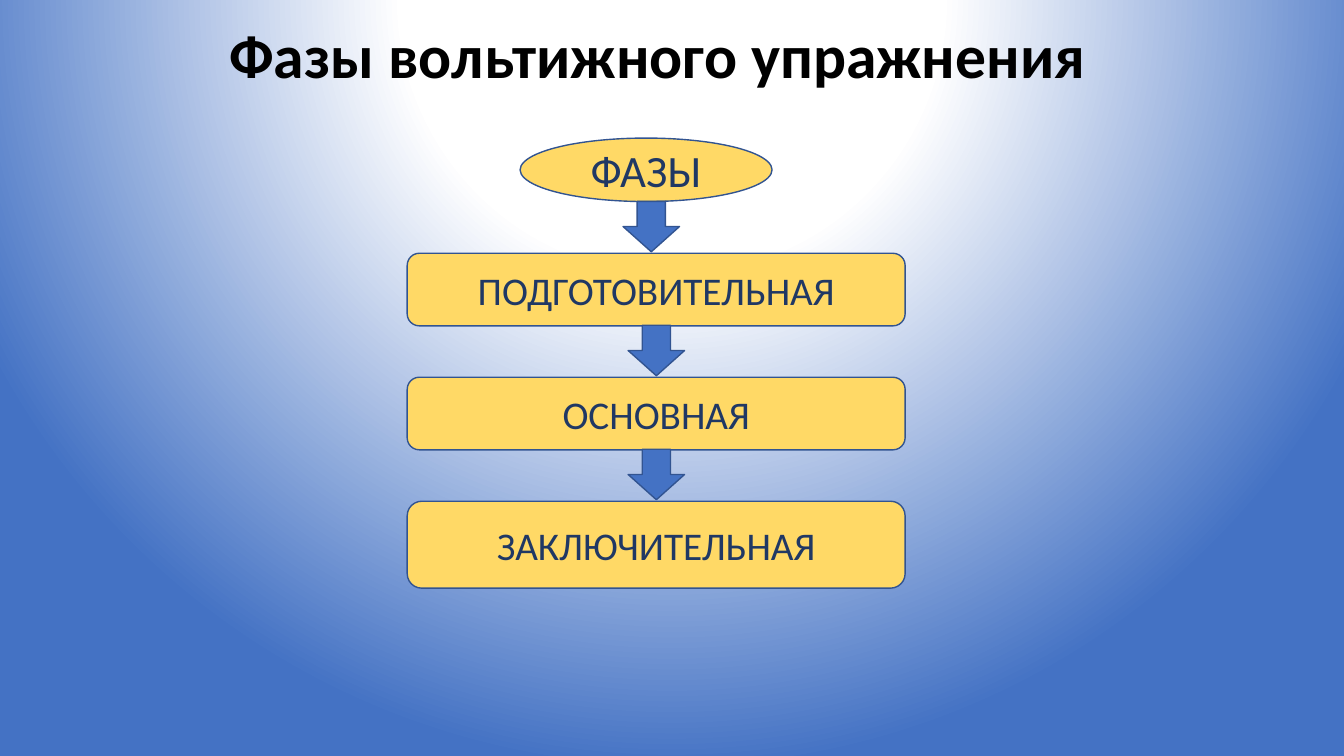
from dataclasses import dataclass

from pptx import Presentation
from pptx.dml.color import RGBColor
from pptx.enum.shapes import MSO_SHAPE
from pptx.enum.text import MSO_ANCHOR, MSO_AUTO_SIZE, PP_ALIGN
from pptx.oxml import parse_xml
from pptx.oxml.ns import nsdecls, qn
from pptx.util import Inches, Pt

ELLIPSE = MSO_SHAPE.OVAL
ROUNDED = MSO_SHAPE.ROUNDED_RECTANGLE
DOWN_ARROW = MSO_SHAPE.DOWN_ARROW
CENTER = PP_ALIGN.CENTER
MIDDLE = MSO_ANCHOR.MIDDLE
NO_AUTOFIT = MSO_AUTO_SIZE.NONE

SLIDE_WIDTH, SLIDE_HEIGHT = Inches(13.33), Inches(7.5)
TITLE_ONLY_LAYOUT = 5


@dataclass(frozen=True)
class Theme:
    font: str = "Calibri"
    title_color: str = "000000"
    text_color: str = "203864"
    box_fill: str = "FFD966"
    accent: str = "4472C4"
    outline: str = "325491"
    glow: str = "FFFFFF"
    title_size: int = 44
    head_size: int = 32
    phase_size: int = 28
    line_width: int = 1


THEME = Theme()

PHASES = [
    ("ПОДГОТОВИТЕЛЬНАЯ", 9.6, 46.36),
    ("ОСНОВНАЯ", 9.6, 46.74),
    ("ЗАКЛЮЧИТЕЛЬНАЯ", 11.5, 46.74),
]
PHASE_LEFT, PHASE_WIDTH = 30.3, 37.05
PHASE_TOP, PHASE_PITCH = 33.5, 16.4
ARROW_RISE, ARROW_WIDTH, ARROW_HEIGHT = 6.87, 4.2, 6.67


def share(left, top, width, height):
    return (
        int(SLIDE_WIDTH * left / 100),
        int(SLIDE_HEIGHT * top / 100),
        int(SLIDE_WIDTH * width / 100),
        int(SLIDE_HEIGHT * height / 100),
    )


def write(box, text, *, size, color, bold=False, spacing=1.0):
    frame = box.text_frame
    frame.word_wrap = True
    frame.auto_size = NO_AUTOFIT
    frame.vertical_anchor = MIDDLE
    para = frame.paragraphs[0]
    para.alignment = CENTER
    para.line_spacing = spacing
    span = para.add_run()
    span.text = text
    span.font.name = THEME.font
    span.font.size = Pt(size)
    span.font.bold = bold
    span.font.color.rgb = RGBColor.from_string(color)


def add_block(page, kind, area, fill):
    block = page.shapes.add_shape(kind, *share(*area))
    block.shadow.inherit = False
    block.fill.solid()
    block.fill.fore_color.rgb = RGBColor.from_string(fill)
    block.line.color.rgb = RGBColor.from_string(THEME.outline)
    block.line.width = Pt(THEME.line_width)
    return block


def paint_background(page):
    page.background.fill.gradient()
    gradient = page.element.find(".//" + qn("a:gradFill"))
    stops = "".join(
        f'<a:gs pos="{place * 1000}"><a:srgbClr val="{color}"/></a:gs>'
        for place, color in [(0, THEME.glow), (35, THEME.glow), (100, THEME.accent)]
    )
    radial = parse_xml(
        f'<a:gradFill {nsdecls("a")} rotWithShape="1"><a:gsLst>{stops}</a:gsLst>'
        '<a:path path="circle">'
        '<a:fillToRect l="50000" t="-80000" r="50000" b="180000"/>'
        "</a:path></a:gradFill>"
    )
    gradient.getparent().replace(gradient, radial)


def set_title(page, text):
    title = page.shapes.title
    title.left, title.top, title.width, title.height = share(12.83, 2, 74.34, 11.47)
    title.text_frame.margin_right = Inches(0.38)
    write(title, text, size=THEME.title_size, color=THEME.title_color,
          bold=True, spacing=0.9)


def add_phase(page, index, text, height, arrow_left):
    top = PHASE_TOP + index * PHASE_PITCH
    arrow_area = (arrow_left, top - ARROW_RISE, ARROW_WIDTH, ARROW_HEIGHT)
    add_block(page, DOWN_ARROW, arrow_area, THEME.accent)
    box = add_block(page, ROUNDED, (PHASE_LEFT, top, PHASE_WIDTH, height), THEME.box_fill)
    write(box, text, size=THEME.phase_size, color=THEME.text_color)


def main():
    deck = Presentation()
    deck.slide_width, deck.slide_height = SLIDE_WIDTH, SLIDE_HEIGHT
    page = deck.slides.add_slide(deck.slide_layouts[TITLE_ONLY_LAYOUT])
    paint_background(page)
    set_title(page, "Фазы вольтижного упражнения")
    head = add_block(page, ELLIPSE, (38.7, 18.27, 18.75, 8.4), THEME.box_fill)
    write(head, "ФАЗЫ", size=THEME.head_size, color=THEME.text_color)
    for index, phase in enumerate(PHASES):
        add_phase(page, index, *phase)
    deck.save("out.pptx")


if __name__ == "__main__":
    main()
